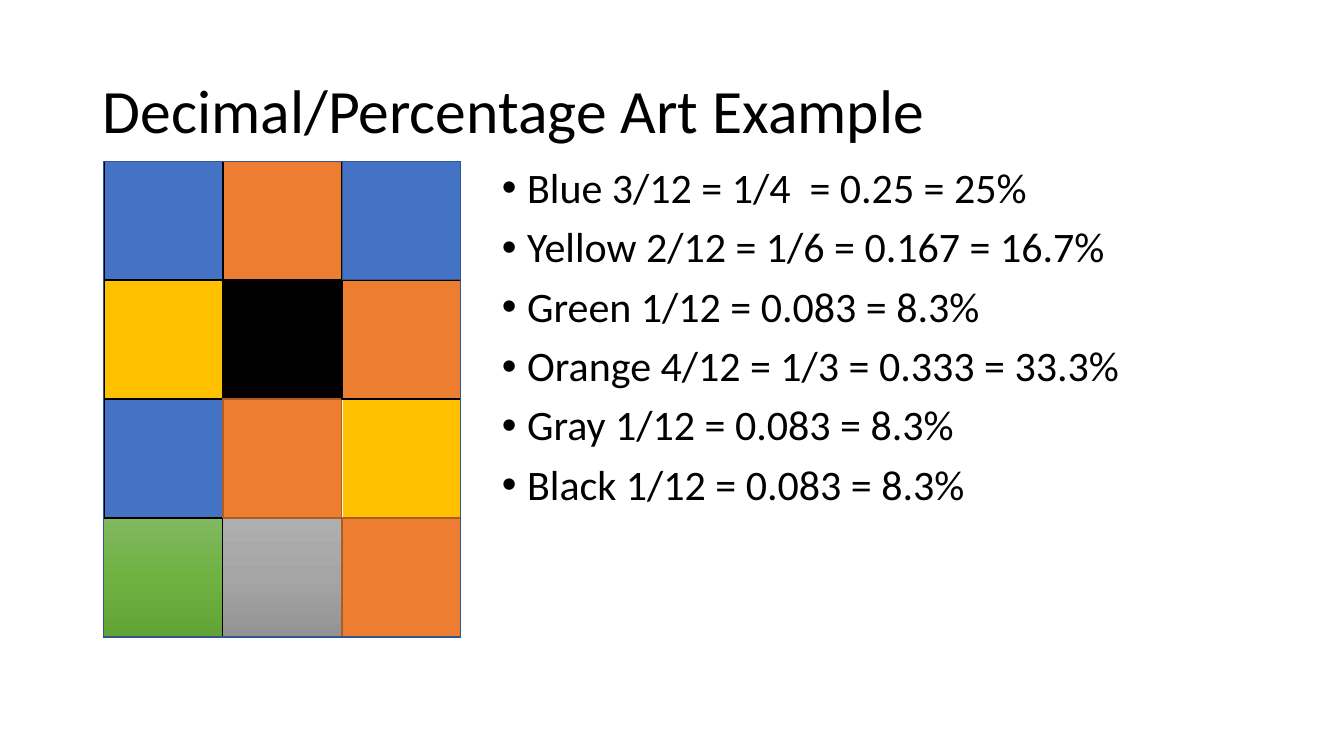
from copy import deepcopy

from lxml import etree
from pptx import Presentation
from pptx.dml.color import RGBColor
from pptx.enum.shapes import MSO_SHAPE
from pptx.enum.text import MSO_ANCHOR, MSO_AUTO_SIZE, PP_ALIGN
from pptx.oxml.ns import qn
from pptx.util import Pt

RECT = MSO_SHAPE.RECTANGLE
MIDDLE = MSO_ANCHOR.MIDDLE
LEFT = PP_ALIGN.LEFT
NO_AUTOFIT = MSO_AUTO_SIZE.NONE

EMU_PER_PX = 9144  # 100 px to the inch
TITLE_ONLY = 5
FONT = "Calibri"
COLORS = {
    "blue": "4472C4", "navy": "325491", "orange": "ED7D31", "rust": "AF5C24",
    "yellow": "FFC000", "black": "000000", "white": "FFFFFF", "gray": "A5A5A5",
}
GRADIENTS = {
    "green shade": ("81B861", "6FB242", "62A336"),
    "gray shade": ("AFAFAF", "A5A5A5", "939393"),
}

GRID_LEFT, GRID_TOP, TILE = 103, 160, 118
COLS, ROWS = 3, 4
# column, row, fill, line colour, line width; later tiles overlap earlier borders
TILES = [
    (0, 0, "blue", "black", 1),
    (1, 1, "black", "black", 1),
    (0, 2, "blue", "black", 1),
    (1, 3, "gray shade", "gray", 0.5),
    (2, 0, "blue", "navy", 1),
    (2, 2, "yellow", "white", 1.5),
    (1, 0, "orange", "black", 1),
    (0, 1, "yellow", "black", 1),
    (2, 3, "orange", "rust", 1),
    (1, 2, "orange", "rust", 1),
    (0, 3, "green shade", "black", 0.5),
    (2, 1, "orange", "black", 1),
]
SHARES = [
    "Blue 3/12 = 1/4  = 0.25 = 25%",
    "Yellow 2/12 = 1/6 = 0.167 = 16.7%",
    "Green 1/12 = 0.083 = 8.3%",
    "Orange 4/12 = 1/3 = 0.333 = 33.3%",
    "Gray 1/12 = 0.083 = 8.3%",
    "Black 1/12 = 0.083 = 8.3%",
]


def px(*lengths):
    return [n * EMU_PER_PX for n in lengths]


def rgb(name):
    return RGBColor.from_string(COLORS[name])


def style_paragraph(p, size):
    p.alignment = LEFT
    p.line_spacing = 0.9
    p.font.name = FONT
    p.font.size = Pt(size)
    p.font.color.rgb = rgb("black")


def set_title(slide, text):
    title = slide.shapes.title
    title.left, title.top, title.width, title.height = px(92, 40, 1150, 145)
    tf = title.text_frame
    tf.text = text
    tf.auto_size = NO_AUTOFIT
    tf.vertical_anchor = MIDDLE
    style_paragraph(tf.paragraphs[0], 44)


def add_bullet(p, indent):
    pPr = p._p.get_or_add_pPr()
    pPr.set("marL", str(indent))
    pPr.set("indent", str(-indent))
    font = etree.Element(qn("a:buFont"), typeface="Arial")
    bullet = etree.Element(qn("a:buChar"), char="•")
    pPr.insert_element_before(font, "a:buChar", "a:tabLst", "a:defRPr", "a:extLst")
    font.addnext(bullet)


def add_bullet_list(slide, items):
    tf = slide.shapes.add_textbox(*px(488, 161, 754, 515)).text_frame
    tf.word_wrap = True
    for i, item in enumerate(items):
        p = tf.add_paragraph() if i else tf.paragraphs[0]
        p.text = item
        style_paragraph(p, 30)
        p.space_before = Pt(10)
        add_bullet(p, *px(25))


def fill_gradient(sp, stops):
    """Fill from top to bottom with three evenly spaced colours."""
    sp.fill.gradient()
    sp.fill.gradient_angle = 270
    first = sp._element.spPr.find(".//" + qn("a:gs"))
    middle = deepcopy(first)
    middle.set("pos", "50000")
    first.addnext(middle)
    for stop, color in zip(sp.fill.gradient_stops, stops):
        stop.color.rgb = RGBColor.from_string(color)


def add_square(slide, col, row, fill, line, weight, cols=1, rows=1):
    """Add a rectangle spanning whole grid cells; a fill of None leaves it open."""
    sp = slide.shapes.add_shape(
        RECT, *px(GRID_LEFT + col * TILE, GRID_TOP + row * TILE, cols * TILE, rows * TILE))
    sp.shadow.inherit = False
    if fill is None:
        sp.fill.background()
    elif fill in GRADIENTS:
        fill_gradient(sp, GRADIENTS[fill])
    else:
        sp.fill.solid()
        sp.fill.fore_color.rgb = rgb(fill)
    sp.line.color.rgb = rgb(line)
    sp.line.width = Pt(weight)


def main():
    prs = Presentation()
    prs.slide_width, prs.slide_height = px(1333, 750)
    slide = prs.slides.add_slide(prs.slide_layouts[TITLE_ONLY])
    set_title(slide, "Decimal/Percentage Art Example")
    add_bullet_list(slide, SHARES)
    for tile in TILES:
        add_square(slide, *tile)
    add_square(slide, 0, 0, None, "navy", 1, COLS, ROWS)
    prs.save("out.pptx")


if __name__ == "__main__":
    main()
